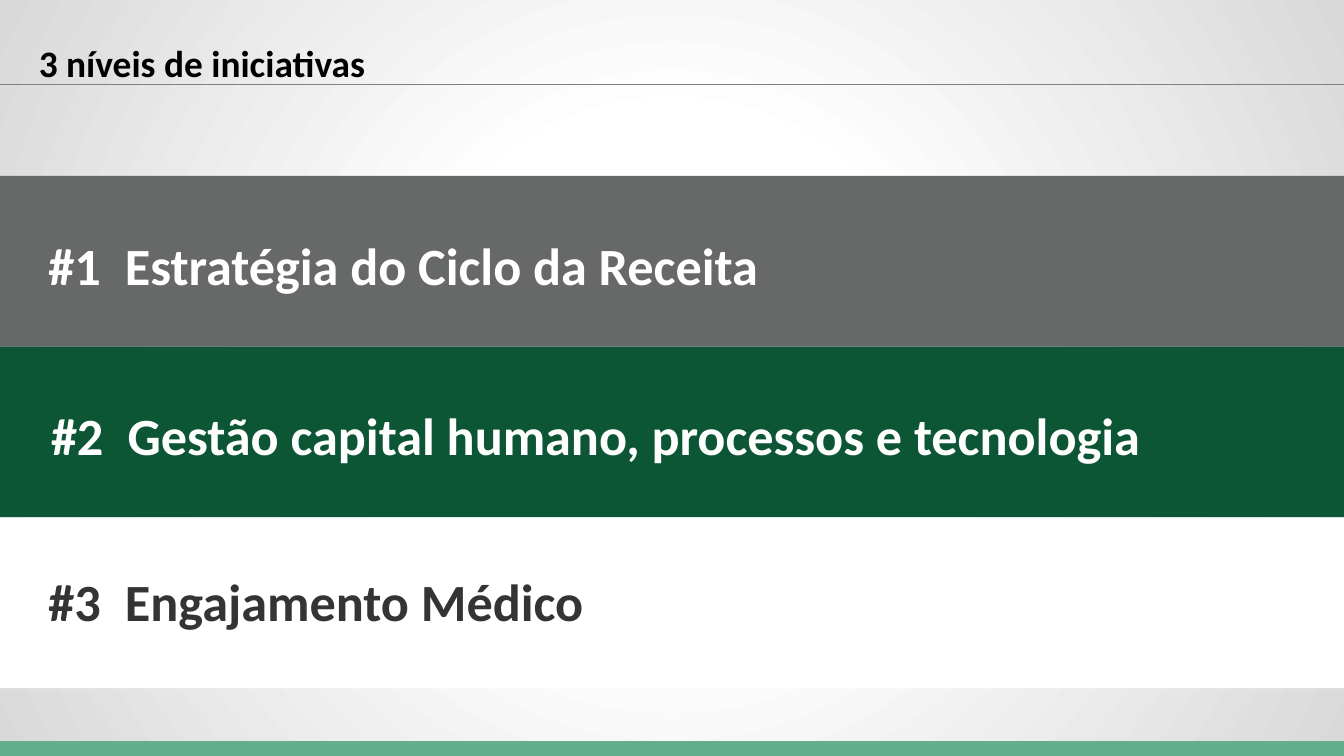
from typing import NamedTuple

from lxml.etree import SubElement
from pptx import Presentation
from pptx.dml.color import RGBColor
from pptx.enum.shapes import MSO_CONNECTOR, MSO_SHAPE
from pptx.enum.text import MSO_ANCHOR
from pptx.oxml import parse_xml
from pptx.oxml.ns import nsdecls, qn
from pptx.util import Inches, Pt

WIDE = 10
HIGH = WIDE * 9 / 16
TOP, ROW = 1.31, 1.27  # first band and row pitch
STRIP = 0.11  # footer height
INSET = 0.1
LEAD, HANG = 0.36, 0.57  # left inset of a label, width of its number

BLACK = RGBColor(0x00, 0x00, 0x00)
WHITE = RGBColor(0xFF, 0xFF, 0xFF)
GRAY = RGBColor(0x66, 0x69, 0x67)
GREEN = RGBColor(0x0C, 0x56, 0x35)
MINT = RGBColor(0x62, 0xAE, 0x8E)
INK = RGBColor(0x33, 0x34, 0x34)
RULE = RGBColor(0x80, 0x80, 0x80)
EDGE = RGBColor(0xD9, 0xD9, 0xD9)


class Band(NamedTuple):
    text: str
    fill: RGBColor
    ink: RGBColor
    left: float  # label offset from the band's left edge
    drop: float  # label offset from the band's top edge
    width: float


BANDS = [
    Band("Estratégia do Ciclo da Receita", GRAY, WHITE, 0, 0.01, 9.87),
    Band("Gestão capital humano, processos e tecnologia", GREEN, WHITE, 0.02, 0.01, 9.87),
    Band("Engajamento Médico", WHITE, INK, 0, -0.03, WIDE),
]


def add_glow(slide) -> None:
    """Radial background, white in the middle."""
    stops = "".join(
        f'<a:gs pos="{share * 1000}"><a:srgbClr val="{color}"/></a:gs>'
        for share, color in ((0, WHITE), (33, WHITE), (100, EDGE))
    )
    slide.element.cSld.insert(0, parse_xml(
        f'<p:bg {nsdecls("p", "a")}><p:bgPr><a:gradFill rotWithShape="1">'
        f'<a:gsLst>{stops}</a:gsLst><a:path path="circle">'
        '<a:fillToRect l="50000" t="50000" r="50000" b="50000"/></a:path>'
        '</a:gradFill><a:effectLst/></p:bgPr></p:bg>'
    ))


def add_bar(slide, top: float, height: float, color: RGBColor) -> None:
    bar = slide.shapes.add_shape(
        MSO_SHAPE.RECTANGLE, 0, Inches(top), Inches(WIDE), Inches(height))
    bar.shadow.inherit = False
    bar.fill.solid()
    bar.fill.fore_color.rgb = color
    bar.line.fill.background()


def add_text(slide, text: str, box: tuple[float, ...], size: int,
             color: RGBColor, lead: float = INSET, hang: float = 0) -> None:
    frame = slide.shapes.add_textbox(*map(Inches, box)).text_frame
    frame.word_wrap = True
    frame.vertical_anchor = MSO_ANCHOR.BOTTOM
    frame.margin_left = Inches(lead)
    frame.margin_top = frame.margin_right = frame.margin_bottom = Inches(INSET)
    para = frame.paragraphs[0]
    para.text = text
    font = para.font
    font.name, font.size, font.bold = "Calibri", Pt(size), True
    font.color.rgb = color
    if hang:
        props = para._p.get_or_add_pPr()
        props.set("marL", str(Inches(hang)))
        props.set("indent", str(-Inches(hang)))


def add_rule(slide, top: float) -> None:
    rule = slide.shapes.add_connector(
        MSO_CONNECTOR.STRAIGHT, Inches(-0.03), Inches(top), Inches(WIDE), Inches(top))
    rule.line.color.rgb = RULE
    rule.line.width = Pt(0.75)
    SubElement(rule._element.spPr, qn("a:effectLst"))


def main() -> None:
    deck = Presentation()
    deck.slide_width, deck.slide_height = Inches(WIDE), Inches(HIGH)
    slide = deck.slides.add_slide(deck.slide_layouts[6])

    # Background, footer strip and heading
    add_glow(slide)
    add_bar(slide, HIGH - STRIP, STRIP, MINT)
    add_rule(slide, 0.63)
    add_text(slide, "3 níveis de iniciativas", (0.19, -0.33, 9.21, 1.06), 20, BLACK)

    # Numbered bands with their labels
    for row, band in enumerate(BANDS):
        top = TOP + row * ROW
        add_bar(slide, top, ROW, band.fill)
        add_text(slide, f"#{row + 1}\t{band.text}",
                 (band.left, top + band.drop, band.width, 0.98),
                 28, band.ink, LEAD, HANG)

    deck.save("out.pptx")


if __name__ == "__main__":
    main()
